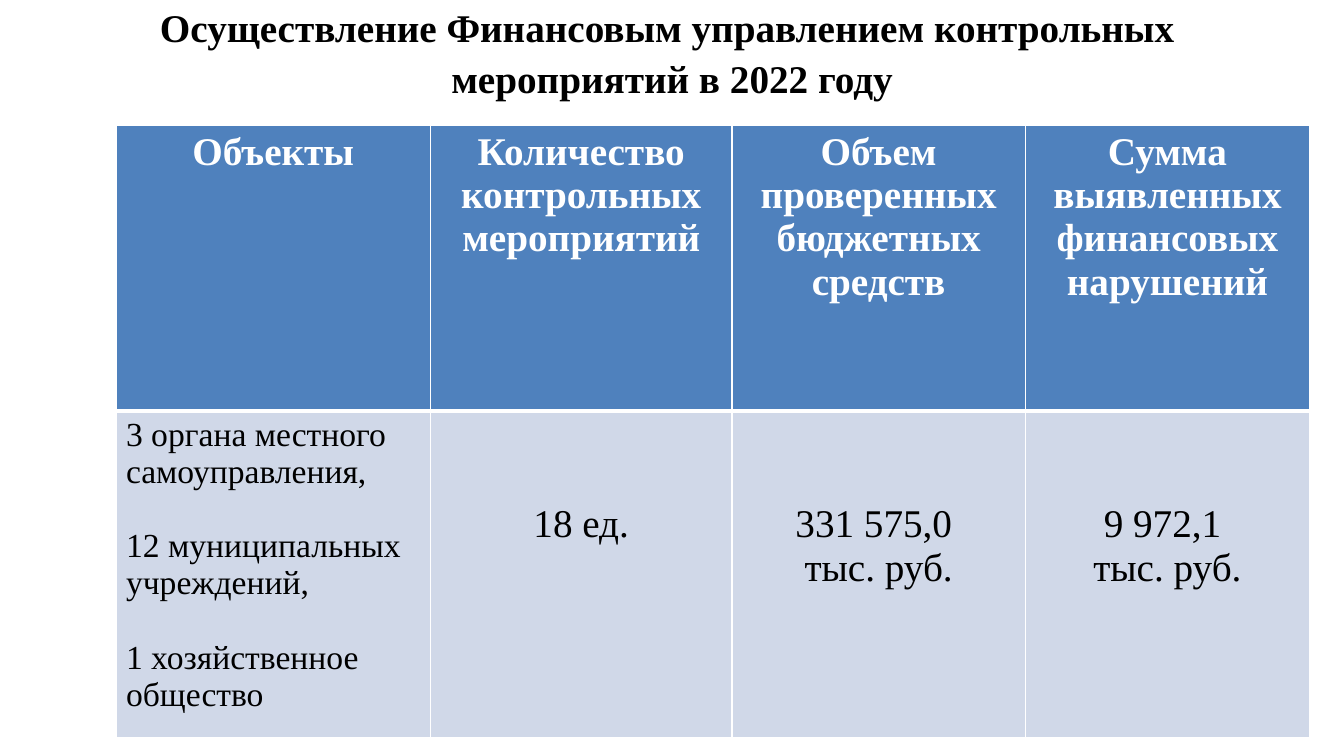
from lxml import etree
from pptx import Presentation
from pptx.dml.color import RGBColor
from pptx.enum.text import MSO_ANCHOR, PP_ALIGN
from pptx.oxml.ns import qn
from pptx.util import Pt

PX = 9144  # EMU in one px, 100 px to the inch
FONT = "Times New Roman"
CENTER, LEFT = PP_ALIGN.CENTER, PP_ALIGN.LEFT
MIDDLE = MSO_ANCHOR.MIDDLE

BLACK = RGBColor(0x00, 0x00, 0x00)
WHITE = RGBColor(0xFF, 0xFF, 0xFF)
BLUE = RGBColor(0x4F, 0x81, 0xBD)
PALE_BLUE = RGBColor(0xD0, 0xD8, 0xE8)

TITLE = ["Осуществление Финансовым управлением контрольных ",
         "мероприятий в 2022 году"]
HEADERS = ["Объекты", "Количество контрольных мероприятий",
           "Объем проверенных бюджетных средств",
           "Сумма выявленных финансовых нарушений"]
OBJECTS = ["3 органа местного самоуправления,",
           "12 муниципальных учреждений,",
           "1 хозяйственное общество"]
RESULTS = [["18 ед."],
           ["331 575,0 ", "тыс. руб."],
           ["9 972,1 ", "тыс. руб."]]
COLUMNS = [312, 299, 291, 282]
ROWS = [284, 305]


class Deck:
    def __init__(self, width, height):
        self.prs = Presentation()
        self.prs.slide_width, self.prs.slide_height = width * PX, height * PX
        self.s = self.prs.slides.add_slide(self.prs.slide_layouts[6])

    def run(self, p, text, size, color, bold):
        r = p.add_run()
        r.text = text
        r.font.name, r.font.size, r.font.bold = FONT, Pt(size), bold
        r.font.color.rgb = color

    def title(self, x, y, w, h, lines):
        tf = self.s.shapes.add_textbox(x * PX, y * PX, w * PX, h * PX).text_frame
        tf.word_wrap = True
        tf.vertical_anchor = MIDDLE
        p = tf.paragraphs[0]
        p.alignment = CENTER
        p.line_spacing = 1.1
        for i, line in enumerate(lines):
            if i:
                p.add_line_break()
            self.run(p, line, 28, BLACK, True)

    def table(self, x, y, columns, rows):
        frame = self.s.shapes.add_table(len(rows), len(columns), x * PX, y * PX,
                                        sum(columns) * PX, sum(rows) * PX)
        table = frame.table
        table.horz_banding = False
        for column, width in zip(table.columns, columns):
            column.width = width * PX
        for row, height in zip(table.rows, rows):
            row.height = height * PX
        return table

    def borders(self, cell, top, bottom):
        """White cell edges; top and bottom are widths in points."""
        tcPr = cell._tc.get_or_add_tcPr()
        for side, width in zip("LRTB", (1, 1, top, bottom)):
            ln = etree.SubElement(tcPr, qn(f"a:ln{side}"), w=str(Pt(width)))
            fill = etree.SubElement(ln, qn("a:solidFill"))
            etree.SubElement(fill, qn("a:srgbClr"), val=str(WHITE))

    def cell(self, cell, lines, size=28, color=BLACK, bold=False, fill=PALE_BLUE,
             align=CENTER, gap=0, top=5, edges=(3, 1)):
        """Fill one cell; gap is the space between paragraphs in points."""
        self.borders(cell, *edges)
        cell.fill.solid()
        cell.fill.fore_color.rgb = fill
        cell.margin_top = top * PX
        tf = cell.text_frame
        for i, line in enumerate(lines):
            p = tf.add_paragraph() if i else tf.paragraphs[0]
            p.alignment = align
            if i and gap:
                p.space_before = Pt(gap)
            self.run(p, line, size, color, bold)


def main():
    deck = Deck(1333, 750)
    deck.title(0, 0, 1333, 99, TITLE)
    table = deck.table(115, 124, COLUMNS, ROWS)
    for col, header in enumerate(HEADERS):
        deck.cell(table.cell(0, col), [header], color=WHITE, bold=True,
                  fill=BLUE, edges=(1, 3))
    deck.cell(table.cell(1, 0), OBJECTS, size=24, align=LEFT, gap=26.5)
    for col, lines in enumerate(RESULTS, 1):
        deck.cell(table.cell(1, col), lines, top=91)
    deck.prs.save("out.pptx")


if __name__ == "__main__":
    main()
